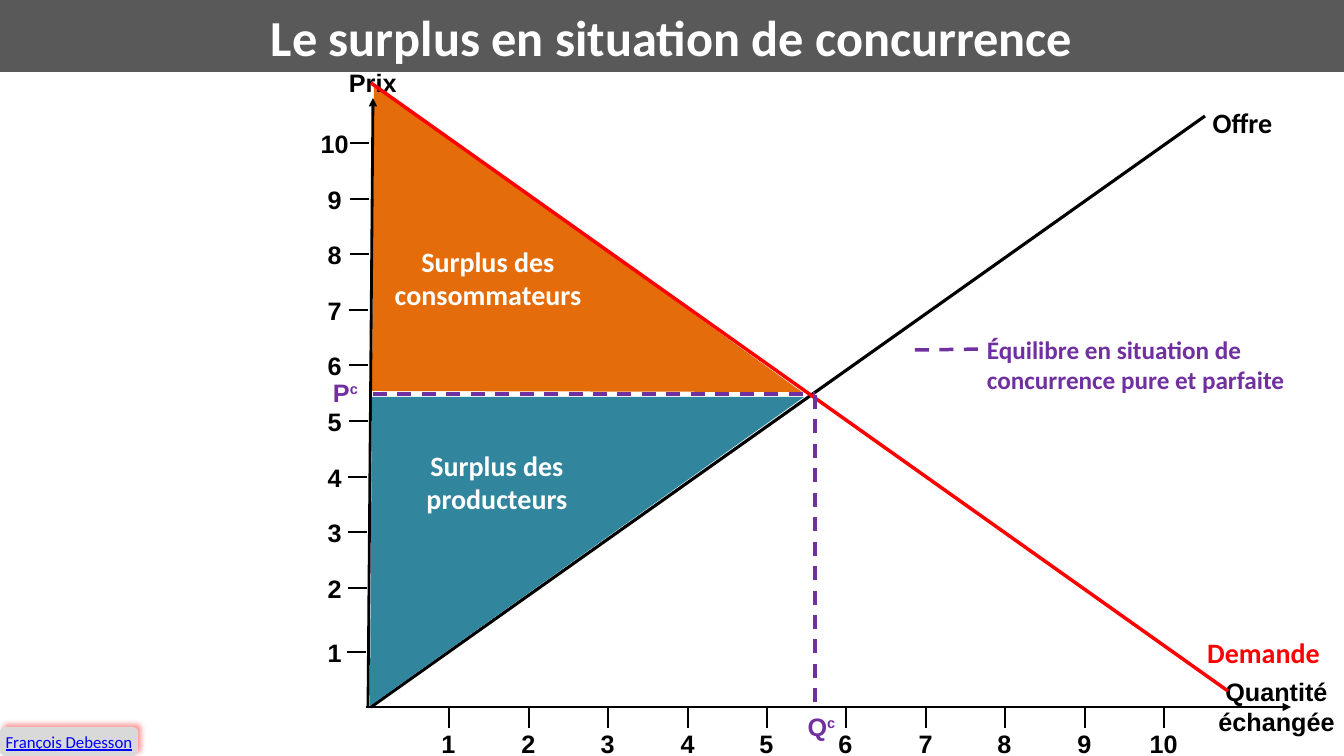
from dataclasses import dataclass

from lxml.etree import SubElement
from pptx import Presentation
from pptx.dml.color import RGBColor
from pptx.enum.dml import MSO_LINE
from pptx.enum.shapes import MSO_CONNECTOR, MSO_SHAPE
from pptx.enum.text import MSO_ANCHOR, PP_ALIGN
from pptx.oxml.ns import qn
from pptx.util import Pt

PX = 914400 / 100.8
BLACK = RGBColor(0x00, 0x00, 0x00)
WHITE = RGBColor(0xFF, 0xFF, 0xFF)
DARK_GREY = RGBColor(0x59, 0x59, 0x59)
LIGHT_GREY = RGBColor(0xD9, 0xD9, 0xD9)
ORANGE = RGBColor(0xE4, 0x6C, 0x0A)
TEAL = RGBColor(0x31, 0x85, 0x9C)
RED = RGBColor(0xFF, 0x00, 0x00)
BLUE = RGBColor(0x00, 0x00, 0xFF)
PURPLE = RGBColor(0x70, 0x30, 0xA0)

AXIS_FONT = dict(name="Arial", size=Pt(18), bold=True)
LABEL_FONT = dict(name="Calibri", size=Pt(20), bold=True)
LEGEND_FONT = dict(LABEL_FONT, size=Pt(18))
TITLE_FONT = dict(LABEL_FONT, size=Pt(36))
AUTHOR_FONT = dict(name="Calibri", size=Pt(12), underline=True)


def emu(px):
    return round(px * PX)


@dataclass
class Box:
    left: int
    top: int
    width: int
    height: int

    def spot(self, x, y):
        return self.left + x, self.top + y

    def inner(self, x, y, width, height):
        return Box(*self.spot(x, y), width, height)

    def emus(self):
        return [emu(v) for v in (self.left, self.top, self.width, self.height)]


def write(shape, lines, font, color, align=PP_ALIGN.CENTER, inset=0,
          anchor=MSO_ANCHOR.TOP, wrap=True, superscript=""):
    frame = shape.text_frame
    margins = {f"margin_{side}": emu(inset) for side in ("left", "top", "right", "bottom")}
    for name, value in dict(margins, word_wrap=wrap, vertical_anchor=anchor).items():
        setattr(frame, name, value)
    for index, line in enumerate(lines):
        para = frame.add_paragraph() if index else frame.paragraphs[0]
        para.alignment = align
        for text in filter(None, (line, superscript)):
            span = para.add_run()
            span.text = text
            for name, value in font.items():
                setattr(span.font, name, value)
            span.font.color.rgb = color
    if superscript:
        span.font._element.set("baseline", "30000")


def add_label(page, box, text, font, color, **options):
    write(page.shapes.add_textbox(*box.emus()), text.split("\n"), font, color, **options)


def paint(shape, color):
    shape.shadow.inherit = False
    shape.fill.solid()
    shape.fill.fore_color.rgb = color
    shape.line.fill.background()


def add_line(page, start, end, color=BLACK, width=2, dashed=False, arrow=False):
    ends = [emu(v) for v in (*start, *end)]
    line = page.shapes.add_connector(MSO_CONNECTOR.STRAIGHT, *ends)
    line.line.color.rgb = color
    line.line.width = Pt(width)
    if dashed:
        line.line.dash_style = MSO_LINE.DASH
    if arrow:
        SubElement(line.line._get_or_add_ln(), qn("a:tailEnd"), type="triangle")
    SubElement(line._element.spPr, qn("a:effectLst"))


def add_title(page, box):
    banner = page.shapes.add_shape(MSO_SHAPE.RECTANGLE, *box.emus())
    paint(banner, DARK_GREY)
    write(banner, ["Le surplus en situation de concurrence"], TITLE_FONT, WHITE,
          anchor=MSO_ANCHOR.MIDDLE)


def add_author(page, box):
    button = page.shapes.add_shape(MSO_SHAPE.ROUNDED_RECTANGLE, *box.emus())
    paint(button, LIGHT_GREY)
    effects = button._element.spPr.find(qn("a:effectLst"))
    glow = SubElement(effects, qn("a:outerShdw"), blurRad="50800", dist="38100",
                      dir="18900000", algn="bl", rotWithShape="0")
    tint = SubElement(glow, qn("a:srgbClr"), val=str(RED))
    SubElement(tint, qn("a:alpha"), val="40000")
    write(button, ["François Debesson"], AUTHOR_FONT, BLUE, anchor=MSO_ANCHOR.MIDDLE)


def add_surplus(page, plot, corners, color):
    first, *others = [[emu(v) for v in plot.spot(*corner)] for corner in corners]
    builder = page.shapes.build_freeform(*first)
    builder.add_line_segments(others, close=True)
    paint(builder.convert_to_shape(), color)


def add_axes(page, plot):
    base = plot.height
    add_line(page, plot.spot(-2, base), plot.spot(3, 15), arrow=True)
    add_line(page, plot.spot(-4, base), plot.spot(plot.width, base), arrow=True)
    for value in range(1, 11):
        x = round(79.4 * value)
        y = base - 8 - round(55.6 * value) + (9 if value == 1 else 0)
        tick = -23 + round(value / 3)
        add_line(page, plot.spot(tick, y), plot.spot(tick + 19, y))
        add_line(page, plot.spot(x, base + 1), plot.spot(x, base + 21))
        for corner in ((-55, y - 15), (x - 20, base + 21)):
            add_label(page, plot.inner(*corner, 39, 30), str(value), AXIS_FONT, BLACK)
    add_label(page, plot.inner(-21, -16, 48, 30), "Prix", AXIS_FONT, BLACK,
              align=PP_ALIGN.LEFT, wrap=False)
    add_label(page, plot.inner(848, 593, 117, 61), "Quantité\néchangée", AXIS_FONT, BLACK,
              wrap=False)


def add_curves(page, plot):
    add_line(page, plot.spot(1, plot.height), plot.spot(835, 33), width=2.25)
    add_line(page, plot.spot(1, 0), plot.spot(858, 608), RED, 2.5)


def add_equilibrium(page, plot):
    quantity, price = 445, 311
    add_line(page, plot.spot(3, price), plot.spot(quantity, price), PURPLE, 2.5, dashed=True)
    add_line(page, plot.spot(quantity, price + 1), plot.spot(quantity, plot.height - 1),
             PURPLE, 2.5, dashed=True)
    for letter, x, y, width in (("P", -40, 294, 31), ("Q", 434, 628, 35)):
        add_label(page, plot.inner(x, y, width, 30), letter, AXIS_FONT, PURPLE,
                  superscript="c")


def add_names(page, plot):
    for text, color, place in (
        ("Surplus des consommateurs", WHITE, (18, 157, 200, 76)),
        ("Surplus des producteurs", WHITE, (27, 361, 200, 76)),
        ("Offre", BLACK, (828, 19, 89, 42)),
        ("Demande", RED, (832, 549, 123, 42)),
    ):
        add_label(page, plot.inner(*place), text, LABEL_FONT, color, inset=4)


def add_legend(page, box):
    add_line(page, box.spot(0, 25), box.spot(70, 24), PURPLE, 2.5, dashed=True)
    add_label(page, box.inner(67, 4, 312, 64),
              "Équilibre en situation de concurrence pure et parfaite", LEGEND_FONT, PURPLE,
              align=PP_ALIGN.LEFT, inset=5)


def add_market_graph(page, plot):
    add_surplus(page, plot, [(2, 308), (4, 1), (432, 309)], ORANGE)
    add_axes(page, plot)
    add_curves(page, plot)
    add_equilibrium(page, plot)
    add_surplus(page, plot, [(2, 314), (0, 623), (434, 314)], TEAL)
    add_names(page, plot)


def main():
    deck = Presentation()
    deck.slide_width, deck.slide_height = emu(1344), emu(756)
    page = deck.slides.add_slide(deck.slide_layouts[6])
    add_title(page, Box(0, 0, 1344, 72))
    add_author(page, Box(0, 727, 138, 29))
    add_market_graph(page, Box(370, 83, 921, 624))
    add_legend(page, Box(915, 325, 383, 72))
    deck.save("out.pptx")


if __name__ == "__main__":
    main()
